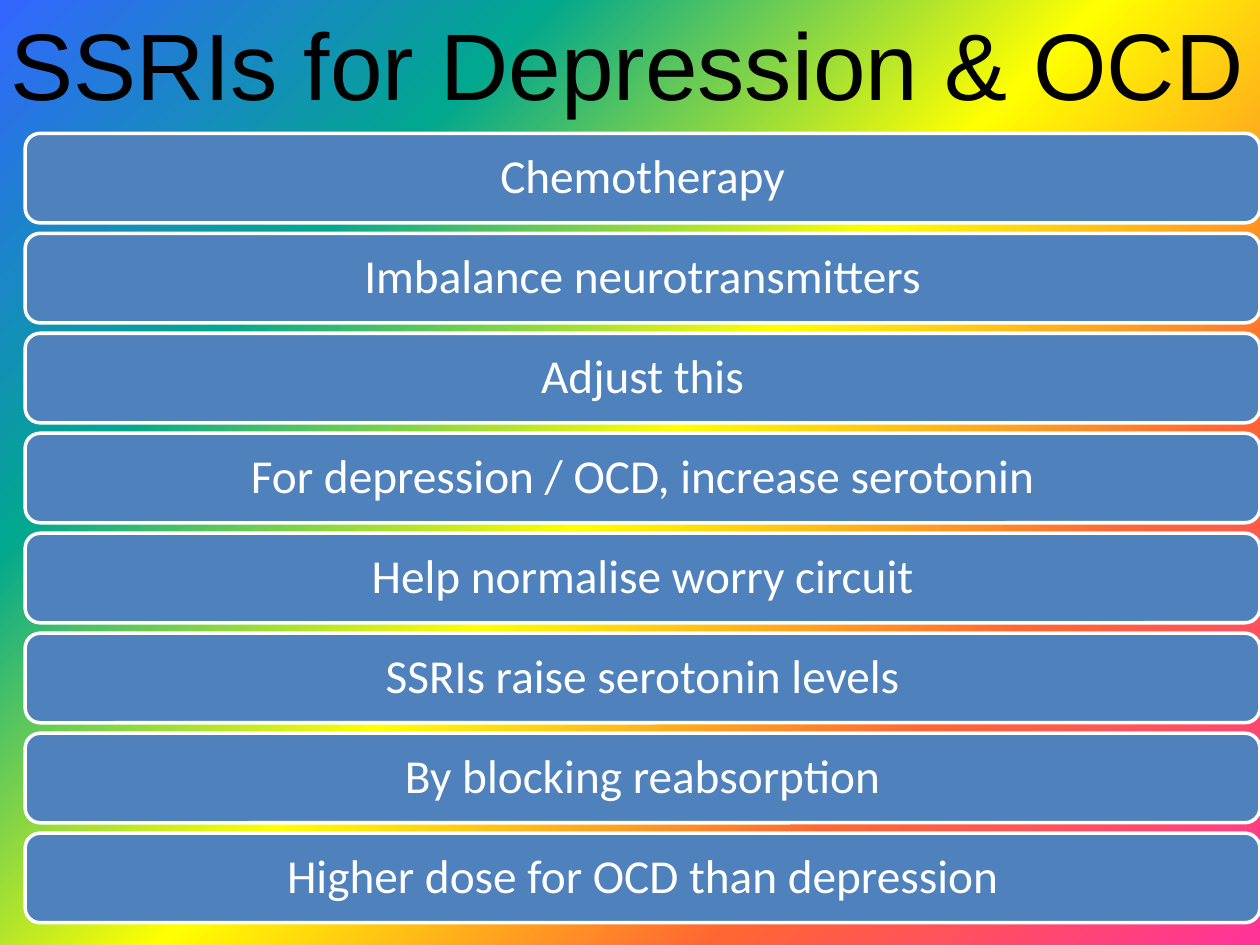
from copy import deepcopy

from pptx import Presentation
from pptx import util as u
from pptx.dml.color import RGBColor
from pptx.enum import shapes, text

COLOURS = {
    "title": "000000",
    "bar": "4F81BD",
    "white": "FFFFFF",
    "pink": "FF3399",
    "orange": "FF6633",
    "yellow": "FFFF00",
    "teal": "01A78F",
    "blue": "3366FF",
}
RAINBOW = ["pink", "orange", "yellow", "teal", "blue"]
POINTS = [
    "Chemotherapy",
    "Imbalance neurotransmitters",
    "Adjust this",
    "For depression / OCD, increase serotonin",
    "Help normalise worry circuit",
    "SSRIs raise serotonin levels",
    "By blocking reabsorption",
    "Higher dose for OCD than depression",
]
BAR_TOP, BAR_HEIGHT, BAR_PITCH = 76.2, 51.2, 57.13


class Painter:
    """Draws the styled elements of one page."""

    def __init__(self, page):
        self.page = page

    def colour(self, name):
        return RGBColor.from_string(COLOURS[name])

    def background(self, names, angle):
        fill = self.page.background.fill
        fill.gradient()
        fill.gradient_angle = angle
        first = fill.gradient_stops[0]._gs
        stop_list = first.getparent()
        for _ in range(len(names) - len(fill.gradient_stops)):
            stop_list.append(deepcopy(first))
        for index, (stop, name) in enumerate(zip(fill.gradient_stops, names)):
            stop.color.rgb = self.colour(name)
            stop.position = index / (len(names) - 1)

    def label(self, box, words, font, size, colour):
        box.text_frame.word_wrap = True
        para = box.text_frame.paragraphs[0]
        para.text = words
        para.alignment = text.PP_ALIGN.CENTER
        para.font.name = font
        para.font.size = u.Pt(size)
        para.font.color.rgb = self.colour(colour)
        return para

    def title(self, words, left, top, width, height):
        box = self.page.shapes.add_textbox(*map(u.Pt, (left, top, width, height)))
        self.label(box, words, "Arial", 54, "title")
        box.text_frame.auto_size = text.MSO_AUTO_SIZE.SHAPE_TO_FIT_TEXT

    def bar(self, words, left, top, width, height):
        box = self.page.shapes.add_shape(
            shapes.MSO_SHAPE.ROUNDED_RECTANGLE, *map(u.Pt, (left, top, width, height))
        )
        box.shadow.inherit = False
        box.fill.solid()
        box.fill.fore_color.rgb = self.colour("bar")
        box.line.color.rgb = self.colour("white")
        box.line.width = u.Pt(2)
        box.text_frame.vertical_anchor = text.MSO_ANCHOR.MIDDLE
        para = self.label(box, words, "Calibri", 27, "white")
        para.line_spacing = 0.9


def main():
    deck = Presentation()
    deck.slide_width, deck.slide_height = u.Pt(720), u.Pt(540)
    painter = Painter(deck.slides.add_slide(deck.slide_layouts[6]))
    painter.background(RAINBOW, 135)
    painter.title("SSRIs for Depression & OCD", -1.5, 0, 720, 72.7)
    for row, words in enumerate(POINTS):
        painter.bar(words, 14.4, BAR_TOP + row * BAR_PITCH, 705.6, BAR_HEIGHT)
    deck.save("out.pptx")


if __name__ == "__main__":
    main()
